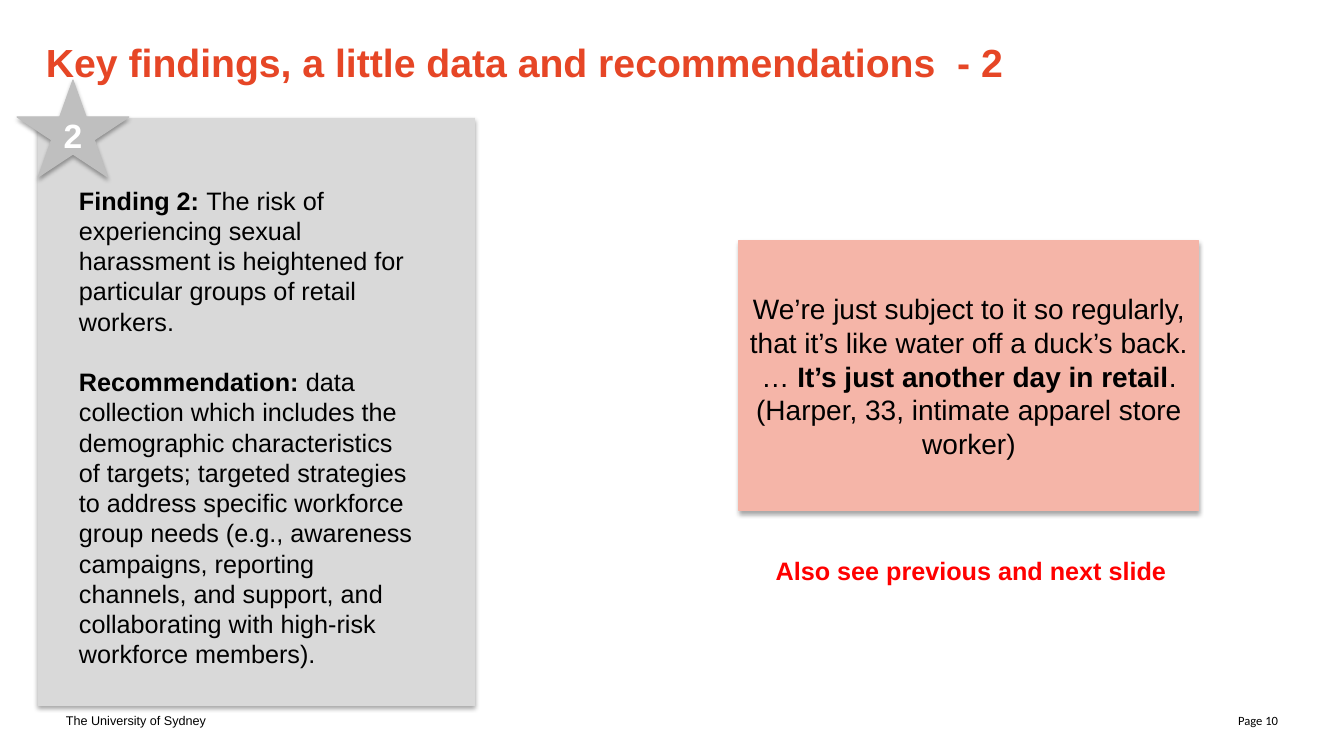
from dataclasses import dataclass
from typing import Optional

from lxml import etree
from pptx import Presentation
from pptx.dml.color import RGBColor
from pptx.enum.shapes import MSO_SHAPE
from pptx.enum.text import MSO_ANCHOR, PP_ALIGN
from pptx.oxml.ns import qn
from pptx.util import Emu, Pt

EMU_PER_PX = 914400 / 100.8

BLACK = RGBColor(0x00, 0x00, 0x00)
WHITE = RGBColor(0xFF, 0xFF, 0xFF)
RED = RGBColor(0xFF, 0x00, 0x00)
ORANGE = RGBColor(0xE6, 0x46, 0x26)
PINK = RGBColor(0xF5, 0xB5, 0xA8)
PANEL_GREY = RGBColor(0xD9, 0xD9, 0xD9)
STAR_GREY = RGBColor(0xBF, 0xBF, 0xBF)

RECTANGLE, STAR = MSO_SHAPE.RECTANGLE, MSO_SHAPE.STAR_5_POINT
LEFT, CENTER, RIGHT = PP_ALIGN.LEFT, PP_ALIGN.CENTER, PP_ALIGN.RIGHT
TOP, MIDDLE = MSO_ANCHOR.TOP, MSO_ANCHOR.MIDDLE

Run = tuple[str, bool]  # text, bold


@dataclass(frozen=True)
class Box:
    left: int
    top: int
    width: int
    height: int


@dataclass(frozen=True)
class Panel:
    kind: MSO_SHAPE
    box: Box
    fill: RGBColor
    outlined: bool = True


@dataclass(frozen=True)
class Label:
    box: Box
    paragraphs: list[list[Run]]
    size: int
    color: RGBColor = BLACK
    align: PP_ALIGN = LEFT
    anchor: MSO_ANCHOR = TOP
    font: str = "Arial"
    margin: Optional[int] = None


def px(length: int) -> Emu:
    return Emu(round(length * EMU_PER_PX))


def place(box: Box) -> tuple[Emu, Emu, Emu, Emu]:
    return px(box.left), px(box.top), px(box.width), px(box.height)


def write_text(shape, paragraphs: list[list[Run]], *, size: int,
               color: RGBColor = BLACK, align: PP_ALIGN = CENTER,
               anchor: MSO_ANCHOR = MIDDLE, font: str = "Arial",
               margin: Optional[int] = None) -> None:
    frame = shape.text_frame
    frame.word_wrap = True
    frame.vertical_anchor = anchor
    if margin is not None:
        frame.margin_left = frame.margin_right = px(margin)
        frame.margin_top = frame.margin_bottom = px(margin)
    for index, runs in enumerate(paragraphs):
        paragraph = frame.add_paragraph() if index else frame.paragraphs[0]
        paragraph.alignment = align
        if index:
            paragraph.space_before = Pt(21.6)
        for text, bold in runs:
            run = paragraph.add_run()
            run.text = text
            run.font.name = font
            run.font.size = Pt(size)
            run.font.bold = bold
            run.font.color.rgb = color


def add_shadow(shape) -> None:
    """Soft shadow falling straight down."""
    shape.shadow.inherit = False
    effects = shape._element.spPr.find(qn("a:effectLst"))
    shadow = etree.SubElement(effects, qn("a:outerShdw"), blurRad="40000",
                              dist="23000", dir="5400000", rotWithShape="0")
    color = etree.SubElement(shadow, qn("a:srgbClr"), val="000000")
    etree.SubElement(color, qn("a:alpha"), val="35000")


def add_panel(slide, panel: Panel):
    shape = slide.shapes.add_shape(panel.kind, *place(panel.box))
    shape.fill.solid()
    shape.fill.fore_color.rgb = panel.fill
    if panel.outlined:
        shape.line.color.rgb = panel.fill
        shape.line.width = Pt(0.75)
    else:
        shape.line.fill.background()
    add_shadow(shape)
    return shape


def add_label(slide, label: Label) -> None:
    shape = slide.shapes.add_textbox(*place(label.box))
    write_text(shape, label.paragraphs, size=label.size, color=label.color,
               align=label.align, anchor=label.anchor, font=label.font,
               margin=label.margin)


FINDING_PANEL = Panel(RECTANGLE, Box(38, 118, 437, 588), PANEL_GREY, outlined=False)
NUMBER_STAR = Panel(STAR, Box(17, 80, 112, 97), STAR_GREY)
QUOTE_PANEL = Panel(RECTANGLE, Box(739, 241, 460, 270), PINK)

QUOTE = [[
    ("We’re just subject to it so regularly, that it’s like water off a duck’s back. … ", False),
    ("It’s just another day in retail", True),
    (". (Harper, 33, intimate apparel store worker)", False),
]]

FINDING = [
    [("Finding 2: ", True),
     ("The risk of experiencing sexual harassment is heightened for particular "
      "groups of retail workers.", False)],
    [("Recommendation: ", True),
     ("data collection which includes the demographic characteristics of targets; "
      "targeted strategies to address specific workforce group needs (e.g., awareness "
      "campaigns, reporting channels, and support, and collaborating with high-risk "
      "workforce members).", False)],
]

LABELS = [
    # Footer
    Label(Box(975, 701, 313, 40), [[("Page 10", False)]], 9,
          align=RIGHT, anchor=MIDDLE, font="Calibri"),
    Label(Box(56, 701, 313, 40), [[("The University of Sydney", False)]], 9, anchor=MIDDLE),
    # Finding and recommendation
    Label(Box(69, 180, 356, 499), FINDING, 18),
    # Title
    Label(Box(46, 33, 1250, 58),
          [[("Key findings, a little data and recommendations  - 2", True)]], 28,
          color=ORANGE, anchor=MIDDLE, margin=0),
    # Cross-reference
    Label(Box(705, 550, 532, 40), [[("Also see previous and next slide", True)]], 18,
          color=RED, align=CENTER),
]


def main() -> None:
    presentation = Presentation()
    presentation.slide_width, presentation.slide_height = px(1344), px(756)
    slide = presentation.slides.add_slide(presentation.slide_layouts[6])

    # Panels with their own text
    add_panel(slide, FINDING_PANEL)
    star = add_panel(slide, NUMBER_STAR)
    write_text(star, [[("2", True)]], size=24, color=WHITE)
    quote = add_panel(slide, QUOTE_PANEL)
    write_text(quote, QUOTE, size=20)

    # Free-standing text
    for label in LABELS:
        add_label(slide, label)

    presentation.save("out.pptx")


if __name__ == "__main__":
    main()
